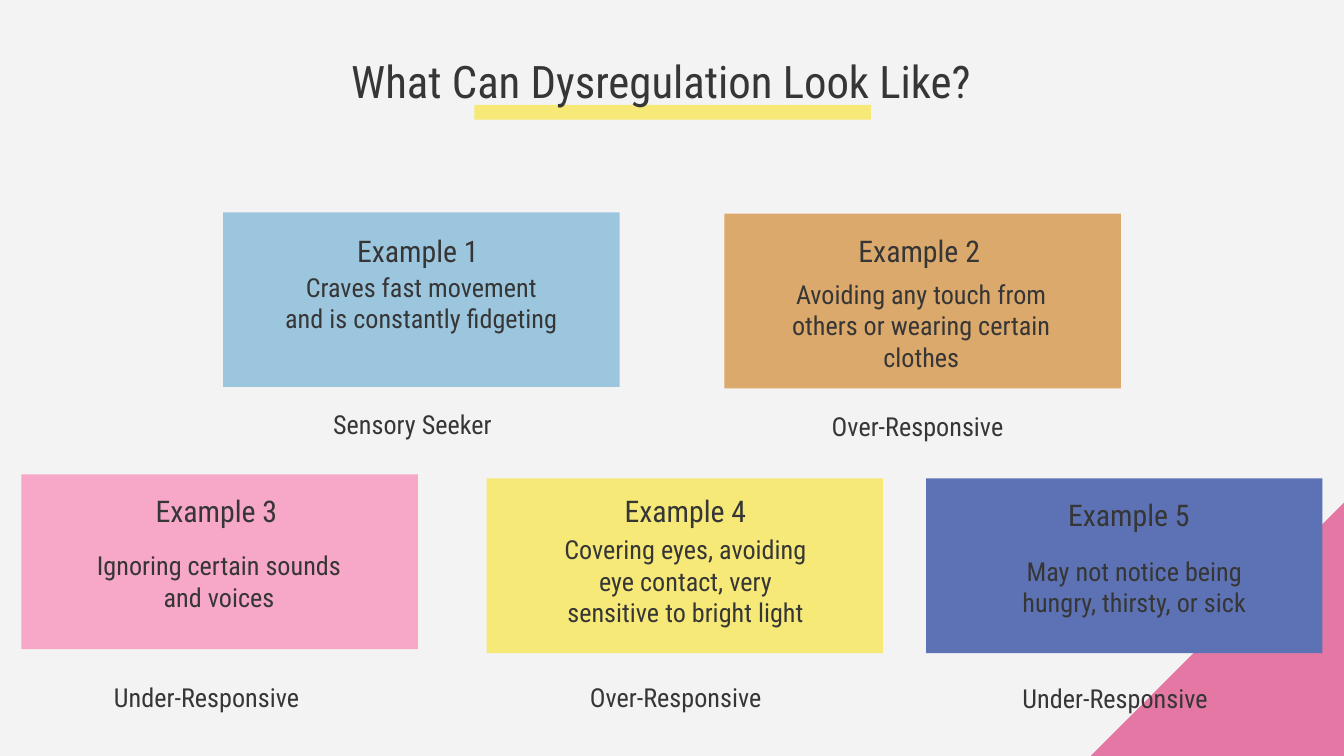
from pptx import Presentation
from pptx.dml.color import RGBColor
from pptx.enum.shapes import MSO_SHAPE
from pptx.enum.text import MSO_ANCHOR, PP_ALIGN
from pptx.util import Inches, Pt

deck = Presentation()
deck.slide_width, deck.slide_height = Inches(10), Inches(5.625)
column, row = deck.slide_width / 100, deck.slide_height / 56.25
slide = deck.slides.add_slide(deck.slide_layouts[5])


def paint(fill, colour):
    fill.solid()
    fill.fore_color.rgb = RGBColor.from_string(colour)


def write(holder, wording, size, align=PP_ALIGN.CENTER, anchor=MSO_ANCHOR.TOP):
    frame = holder.text_frame
    frame.text = wording
    frame.word_wrap = True
    frame.vertical_anchor = anchor
    frame.margin_left = frame.margin_right = Inches(0.1)
    frame.margin_top = frame.margin_bottom = Inches(0.1)
    paragraph = frame.paragraphs[0]
    paragraph.alignment = align
    font = paragraph.runs[0].font
    font.name, font.size = "Roboto Condensed", Pt(size)
    font.color.rgb = RGBColor.from_string("363636")


paint(slide.background.fill, "F3F3F3")

title = slide.shapes.title
title.left, title.top = int(2.6 * column), int(3 * row)
title.width, title.height = int(93.2 * column), int(6.3 * row)
write(title, "What Can Dysregulation Look Like?", 24)

CARD_WIDTH, CARD_HEIGHT = 29.5, 13
HEADING_WIDTH, HEADING_HEIGHT = 26.4, 5
DETAIL_HEIGHT, LABEL_HEIGHT = 6.7, 2.9
LEFT, CENTER = PP_ALIGN.LEFT, PP_ALIGN.CENTER

corner = (MSO_SHAPE.RIGHT_TRIANGLE, 81.1, 37.4, 18.9, 18.9, "E477A3", 270)
underline = (MSO_SHAPE.RECTANGLE, 35.3, 7.8, CARD_WIDTH, 1.1, "F6E977", 0)
cards = [
    (MSO_SHAPE.RECTANGLE, x, y, CARD_WIDTH, CARD_HEIGHT, colour, 0)
    for x, y, colour in [
        (16.6, 15.8, "9CC6DE"),
        (53.9, 15.9, "DBA96B"),
        (1.6, 35.3, "F7A7C7"),
        (36.2, 35.6, "F6E977"),
        (68.9, 35.6, "5C72B4"),
    ]
]
for kind, x, y, width, height, colour, turn in [corner, underline] + cards:
    block = slide.shapes.add_shape(
        kind, int(x * column), int(y * row), int(width * column), int(height * row))
    block.shadow.inherit = False
    block.rotation = turn
    paint(block.fill, colour)
    block.line.fill.background()
    if y < 10 or turn:
        title.element.addprevious(block.element)

examples = [
    ((17.9, 16, CENTER), (20.2, 19.2, 22.3), (23.8, 29.4),
     "Craves fast movement and is constantly fidgeting", "Sensory Seeker"),
    ((55.2, 16, CENTER), (56.9, 19.7, 23.3), (60.9, 29.5),
     "Avoiding any touch from others or wearing certain clothes", "Over-Responsive"),
    ((10.6, 35.3, LEFT), (5.7, 39.9, 21.2), (7.5, 49.7),
     "Ignoring certain sounds and voices", "Under-Responsive"),
    ((37.8, 35.3, CENTER), (40.4, 38.7, 21.2), (42.9, 49.7),
     "Covering eyes, avoiding eye contact, very sensitive to bright light",
     "Over-Responsive"),
    ((70.8, 35.6, CENTER), (73.8, 40.3, 21.2), (75.1, 49.8),
     "May not notice being hungry, thirsty, or sick", "Under-Responsive"),
]
for number, (heading, detail, label, behaviour, response) in enumerate(examples, 1):
    heading_x, heading_y, heading_align = heading
    detail_x, detail_y, detail_width = detail
    label_x, label_y = label
    for x, y, width, height, wording, size, align, anchor in [
        (heading_x, heading_y, HEADING_WIDTH, HEADING_HEIGHT,
         f"Example {number}", 16, heading_align, MSO_ANCHOR.BOTTOM),
        (detail_x, detail_y, detail_width, DETAIL_HEIGHT,
         behaviour, 14, CENTER, MSO_ANCHOR.TOP),
        (label_x, label_y, 24 if "Under" in response else 20.1, LABEL_HEIGHT,
         response, 14, LEFT, MSO_ANCHOR.TOP),
    ]:
        caption = slide.shapes.add_textbox(
            int(x * column), int(y * row), int(width * column), int(height * row))
        write(caption, wording, size, align, anchor)

deck.save("out.pptx")
